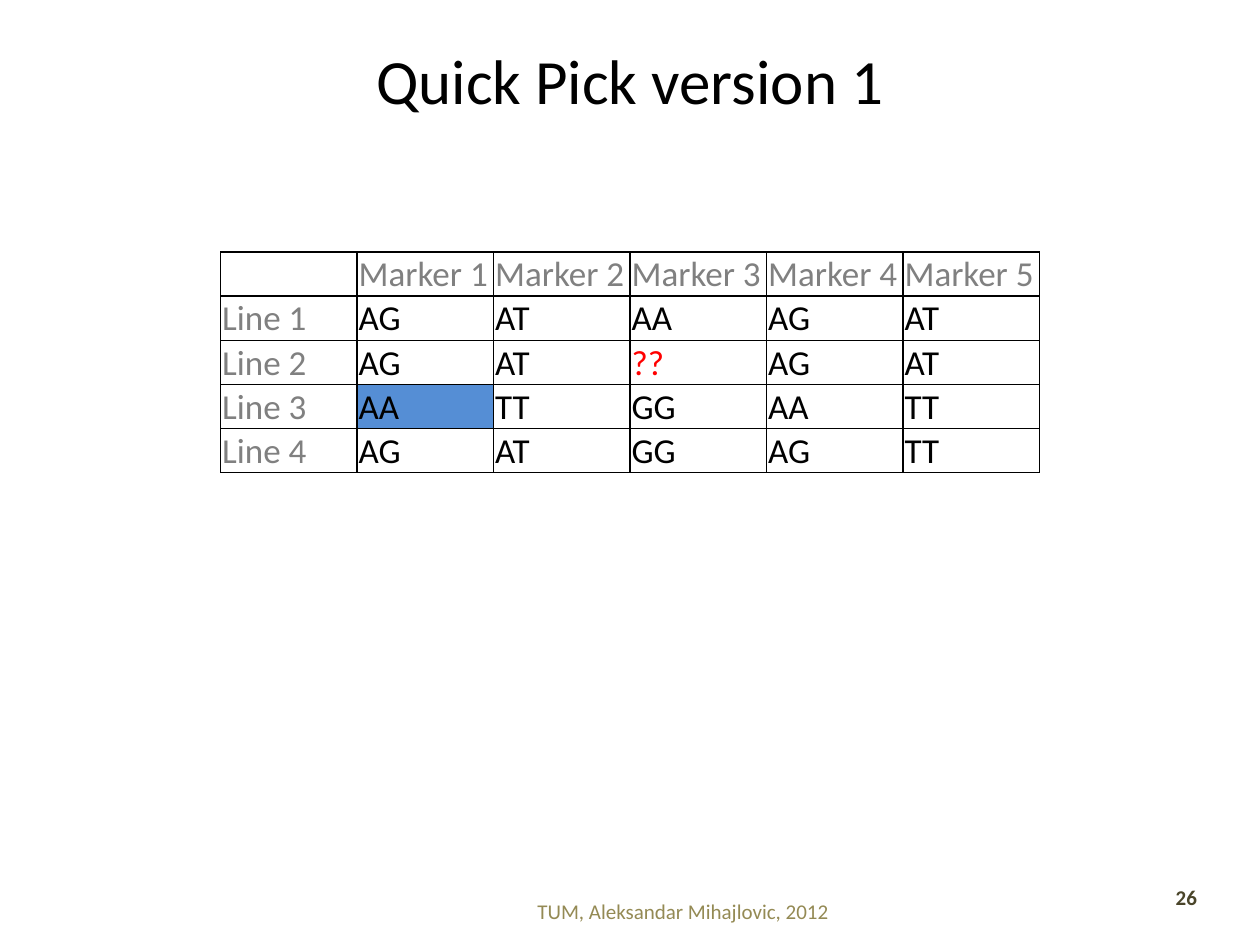
import pptx
import pptx.util
import pptx.dml.color
import pptx.enum.text
import pptx.oxml

Cm = pptx.util.Cm
Pt = pptx.util.Pt
RGBColor = pptx.dml.color.RGBColor
Align = pptx.enum.text.PP_ALIGN
Anchor = pptx.enum.text.MSO_ANCHOR

BLACK = RGBColor(0x00, 0x00, 0x00)
GREY = RGBColor(0x80, 0x80, 0x80)
RED = RGBColor(0xFF, 0x00, 0x00)
BLUE = RGBColor(0x55, 0x8E, 0xD5)
TAN = RGBColor(0x94, 0x8A, 0x54)
BROWN = RGBColor(0x4A, 0x45, 0x2A)

ROWS = [
    ["", "Marker 1", "Marker 2", "Marker 3", "Marker 4", "Marker 5"],
    ["Line 1", "AG", "AT", "AA", "AG", "AT"],
    ["Line 2", "AG", "AT", "??", "AG", "AT"],
    ["Line 3", "AA", "TT", "GG", "AA", "TT"],
    ["Line 4", "AG", "AT", "GG", "AG", "TT"],
]
MARKED = (3, 1)
BORDER = (
    '<a:{} xmlns:a="http://schemas.openxmlformats.org/drawingml/2006/main" w="12700">'
    '<a:solidFill><a:srgbClr val="{}"/></a:solidFill></a:{}>'
)


def style(item, values):
    for name, value in values.items():
        setattr(item, name, value)


def write(frame, text, size, color, align, bold=False):
    par = frame.paragraphs[0]
    par.text = text
    par.alignment = align
    style(par.font, {"name": "Calibri", "size": Pt(size), "bold": bold})
    par.font.color.rgb = color


deck = pptx.Presentation()
style(deck, {"slide_width": Cm(25.4), "slide_height": Cm(19.05)})
slide = deck.slides.add_slide(deck.slide_layouts[5])

title = slide.shapes.title
style(title, {"left": Cm(1.27), "top": Cm(0), "width": Cm(22.86), "height": Cm(3.18)})
title.text_frame.vertical_anchor = Anchor.MIDDLE
write(title.text_frame, "Quick Pick version 1", 36, BLACK, Align.CENTER)

notes = [
    ("TUM, Aleksandar Mihajlovic, 2012", (6.43, 17.88, 14.68, 0.99), TAN, Align.CENTER, Anchor.MIDDLE, False),
    ("26", (22.12, 17.7, 2.26, 0.99), BROWN, Align.RIGHT, Anchor.TOP, True),
]
for text, place, color, align, anchor, bold in notes:
    box = slide.shapes.add_textbox(*map(Cm, place))
    style(box.text_frame, {"word_wrap": True, "vertical_anchor": anchor})
    write(box.text_frame, text, 12, color, align, bold)

grid = slide.shapes.add_table(
    len(ROWS), len(ROWS[0]), Cm(4.45), Cm(5.08), Cm(16.51), Cm(4.45)
).table
style(grid, {"first_row": False, "horz_banding": False})
format = {
    "margin_left": Cm(0.03),
    "margin_right": Cm(0.03),
    "margin_top": Cm(0.03),
    "margin_bottom": Cm(0),
    "vertical_anchor": Anchor.BOTTOM,
}
for r, row in enumerate(ROWS):
    for c, text in enumerate(row):
        cell = grid.cell(r, c)
        style(cell, format)
        color = RED if text == "??" else GREY if r == 0 or c == 0 else BLACK
        write(cell.text_frame, text, 20, color, Align.LEFT)
        if (r, c) == MARKED:
            cell.fill.solid()
            cell.fill.fore_color.rgb = BLUE
        else:
            cell.fill.background()
        props = cell._tc.get_or_add_tcPr()
        for spot, side in enumerate(["lnL", "lnR", "lnT", "lnB"]):
            props.insert(spot, pptx.oxml.parse_xml(BORDER.format(side, BLACK, side)))

deck.save("out.pptx")
